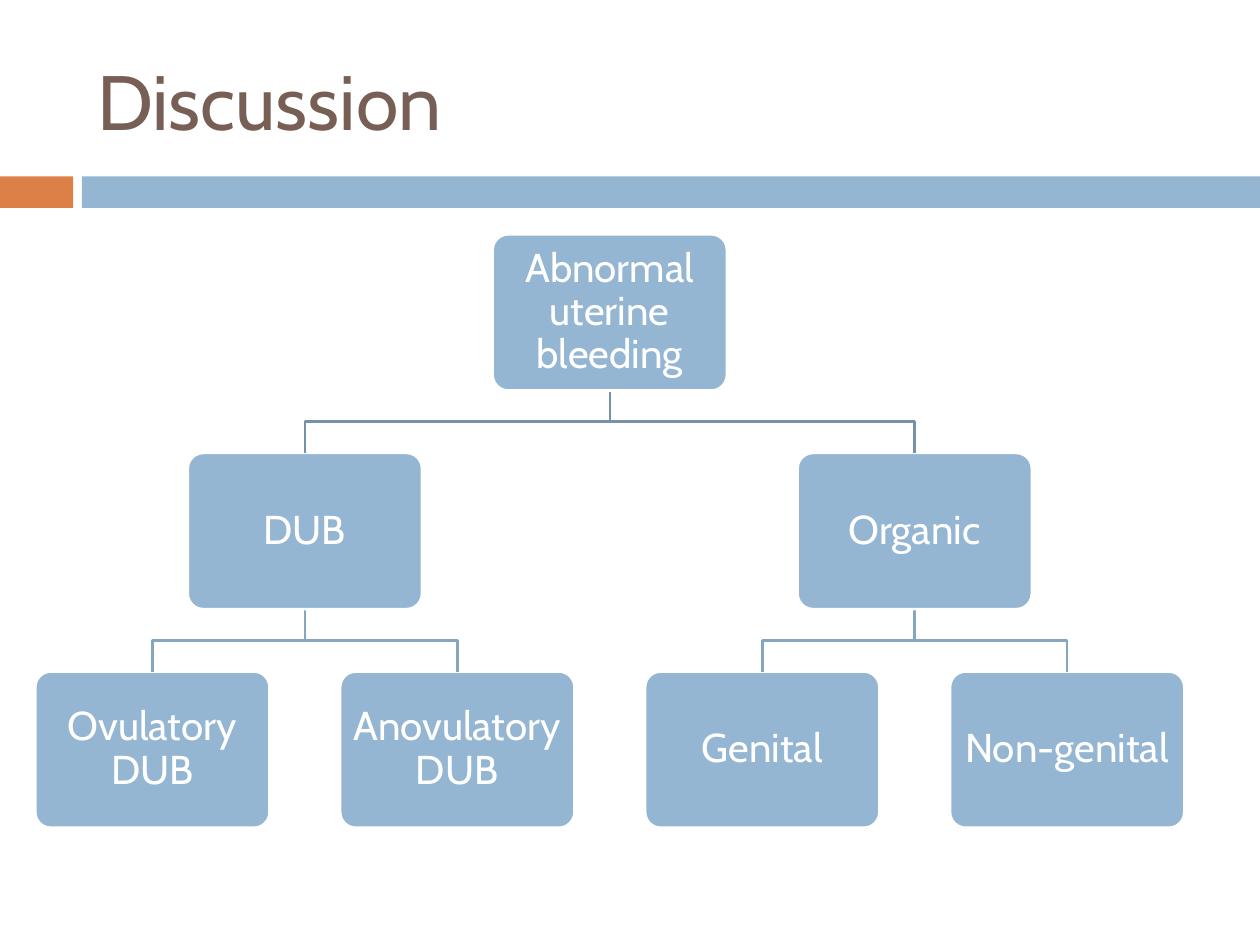
from dataclasses import dataclass

from pptx import Presentation
from pptx.dml.color import RGBColor as RGB
from pptx.enum.shapes import MSO_SHAPE as Shape
from pptx.enum.text import MSO_ANCHOR as Anchor, PP_ALIGN as Align
from pptx.util import Inches, Pt


@dataclass(frozen=True)
class Theme:
    font: str = "Cabin"
    title: RGB = RGB.from_string("775F55")
    accent: RGB = RGB.from_string("DD8047")
    blue: RGB = RGB.from_string("94B6D2")
    white: RGB = RGB.from_string("FFFFFF")
    links: tuple = (RGB.from_string("7792A8"), RGB.from_string("86A5BF"))
    title_size: Pt = Pt(44)
    node_size: Pt = Pt(23)
    line: Pt = Pt(1.5)


THEME = Theme()
TREE = ("Abnormal uterine bleeding", [
    ("DUB", [("Ovulatory DUB", []), ("Anovulatory DUB", [])]),
    ("Organic", [("Genital", []), ("Non-genital", [])]),
])
NODE_W, NODE_H = Inches(1.86), Inches(1.24)


def style(frame, size, color, align):
    frame.word_wrap = True
    frame.vertical_anchor = Anchor.MIDDLE
    for para in frame.paragraphs:
        para.alignment = align
        for run in para.runs:
            run.font.name = THEME.font
            run.font.size = size
            run.font.color.rgb = color


def add_title(slide, text, left, top, width, height):
    title = slide.shapes.title
    title.left, title.top, title.width, title.height = left, top, width, height
    title.text_frame.text = text
    style(title.text_frame, THEME.title_size, THEME.title, Align.LEFT)


def add_band(slide, left, top, width, height):
    """Draw a short accent bar and a long blue bar with a gap between."""
    short, start = Inches(0.58), Inches(0.65)
    bars = ((left, short, THEME.accent),
            (left + start, width - start, THEME.blue))
    for x, w, color in bars:
        bar = slide.shapes.add_shape(Shape.RECTANGLE, x, top, w, height)
        bar.shadow.inherit = False
        bar.fill.solid()
        bar.fill.fore_color.rgb = color
        bar.line.fill.background()


def add_node(slide, text, mid, top):
    node = slide.shapes.add_shape(
        Shape.ROUNDED_RECTANGLE, mid - NODE_W // 2, top, NODE_W, NODE_H)
    node.adjustments[0] = 0.1
    node.shadow.inherit = False
    node.fill.solid()
    node.fill.fore_color.rgb = THEME.blue
    node.line.color.rgb = THEME.white
    node.line.width = THEME.line
    frame = node.text_frame
    frame.text = text
    frame.margin_left = frame.margin_right = Inches(0.06)
    frame.margin_top = frame.margin_bottom = Inches(0.06)
    style(frame, THEME.node_size, THEME.white, Align.CENTER)
    frame.paragraphs[0].line_spacing = 0.9


def add_link(slide, start, end, color):
    """Draw an open path that goes down, across and down again."""
    (x1, y1), (x2, y2) = start, end
    half = (y1 + y2) // 2
    path = slide.shapes.build_freeform(x1, y1)
    path.add_line_segments([(x1, half), (x2, half), (x2, y2)], close=False)
    link = path.convert_to_shape()
    link.shadow.inherit = False
    link.fill.background()
    link.line.color.rgb = color
    link.line.width = THEME.line


def count_leaves(tree):
    return sum(map(count_leaves, tree[1])) or 1


def count_rows(tree):
    return 1 + max(map(count_rows, tree[1]), default=0)


def add_tree(slide, tree, left, top, width, height):
    """Spread leaves evenly over the box and centre parents above them."""
    col = (width - NODE_W) // (count_leaves(tree) - 1)
    row = (height - NODE_H) // (count_rows(tree) - 1)

    def place(branch, first, depth):
        text, kids = branch
        y = top + depth * row
        mids = []
        leaf = first
        for kid in kids:
            mids.append(place(kid, leaf, depth + 1))
            leaf += count_leaves(kid)
        if mids:
            mid = (mids[0] + mids[-1]) // 2
        else:
            mid = left + NODE_W // 2 + first * col
        for x in mids:
            add_link(slide, (mid, y + NODE_H), (x, y + row),
                     THEME.links[depth])
        add_node(slide, text, mid, y)
        return mid

    place(tree, 0, 0)


def main():
    deck = Presentation()
    deck.slide_width, deck.slide_height = Inches(10), Inches(7.5)
    slide = deck.slides.add_slide(deck.slide_layouts[5])
    add_band(slide, 0, Inches(1.4), deck.slide_width, Inches(0.25))
    add_title(slide, "Discussion",
              Inches(0.67), Inches(0.25), Inches(8.92), Inches(1.08))
    add_tree(slide, TREE,
             Inches(0.28), Inches(1.86), Inches(9.12), Inches(4.71))
    deck.save("out.pptx")


if __name__ == "__main__":
    main()
